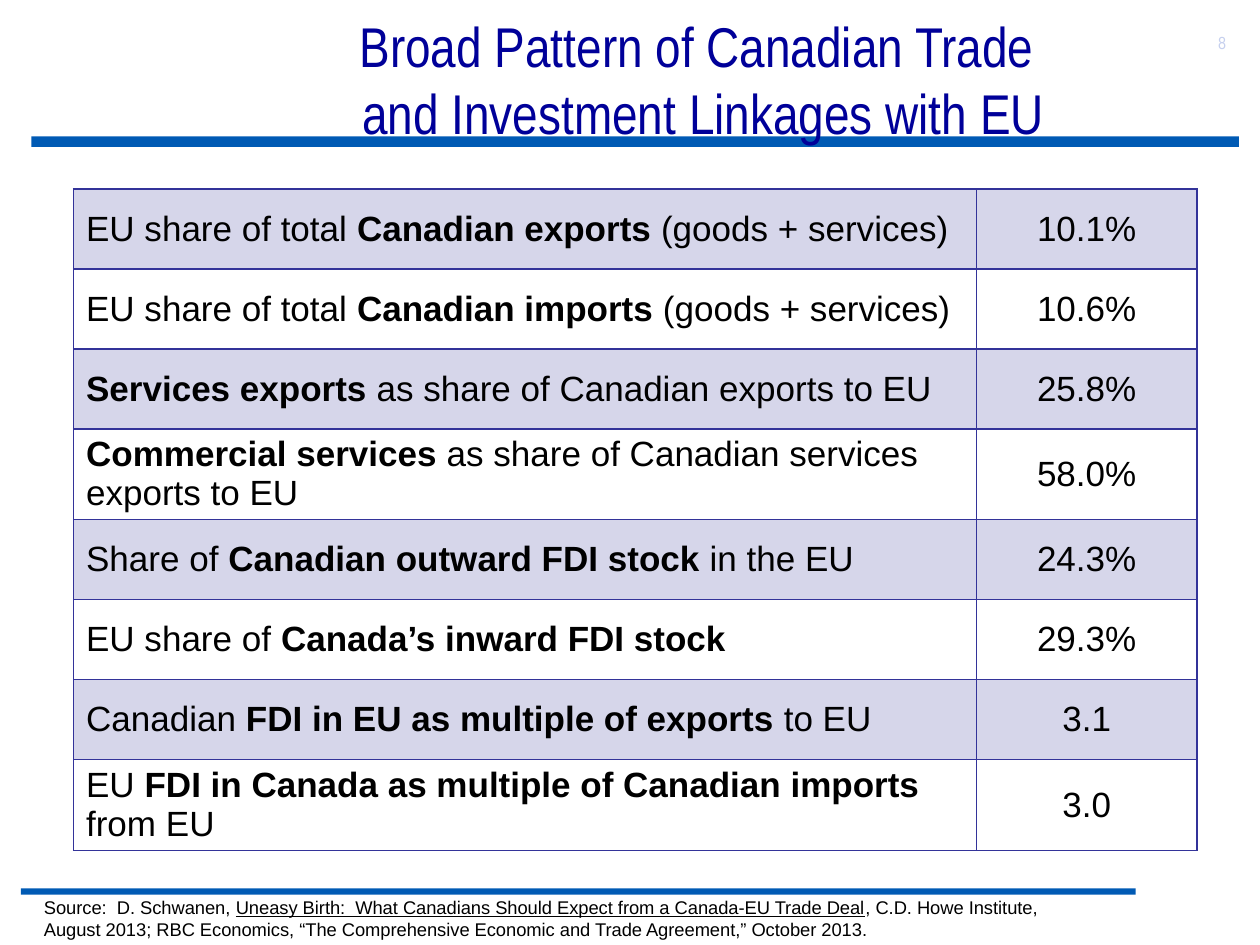
from lxml.etree import SubElement as Sub
from pptx import Presentation
from pptx.dml.color import RGBColor as RGB
from pptx.enum.shapes import MSO_SHAPE as Shape
from pptx.enum.text import MSO_ANCHOR as Anchor, MSO_AUTO_SIZE as Fit, PP_ALIGN as Align
from pptx.oxml.ns import qn
from pptx.util import Pt

INK = "333399"
BLUE = "005AB4"
HEAD = {"size": Pt(32), "name": "Arial Narrow", "color": "000099"}
BODY = {"size": Pt(20), "name": "Arial", "color": "000000"}
NOTE = {**BODY, "size": Pt(10.5)}
PAGE = {"size": Pt(10), "name": "Arial Narrow", "color": "C6D0EE"}
BOLD = {"bold": True}
LINE = {"underline": True}

ROWS = [
    (["EU share of total ", "Canadian exports", " (goods + services)"], "10.1%"),
    (["EU share of total ", "Canadian imports", " (goods + services)"], "10.6%"),
    (["", "Services exports", " as share of Canadian exports to EU"], "25.8%"),
    (["", "Commercial services", " as share of Canadian services exports to EU"], "58.0%"),
    (["Share of ", "Canadian outward FDI stock", " in the EU"], "24.3%"),
    (["EU share of ", "Canada’s inward FDI stock"], "29.3%"),
    (["Canadian ", "FDI in EU as multiple of exports ", "to EU"], "3.1"),
    (["EU ", "FDI in Canada as multiple of Canadian imports", " from EU"], "3.0"),
]
SOURCE = [
    "Source:  D. Schwanen, ",
    "Uneasy Birth:  What Canadians Should Expect from a Canada-EU Trade Deal",
    ", C.D. Howe Institute, August 2013; RBC Economics, “The Comprehensive "
    "Economic and Trade Agreement,” October 2013.",
]


def paint(fill, color):
    fill.solid()
    fill.fore_color.rgb = RGB.from_string(color)


def style(font, form):
    for key, val in form.items():
        if key == "color":
            font.color.rgb = RGB.from_string(val)
        else:
            setattr(font, key, val)


def write(para, parts, form, mark):
    for num, part in enumerate(parts):
        if part:
            run = para.add_run()
            run.text = part
            style(run.font, {**form, **mark} if num == 1 else form)


def add_bar(slide, *area):
    bar = slide.shapes.add_shape(Shape.RECTANGLE, *map(Pt, area))
    bar.shadow.inherit = False
    paint(bar.fill, BLUE)
    bar.line.fill.background()


def add_text(slide, area, parts, form, mark):
    frame = slide.shapes.add_textbox(*map(Pt, area)).text_frame
    frame.word_wrap = True
    write(frame.paragraphs[0], parts, form, mark)


def set_title(slide, text):
    title = slide.shapes.title
    title.left, title.top, title.width, title.height = map(Pt, (48, 12, 708, 66))
    frame = title.text_frame
    frame.text = text
    frame.auto_size = Fit.NONE
    frame.vertical_anchor = Anchor.MIDDLE
    para = frame.paragraphs[0]
    para.alignment = Align.CENTER
    for run in para.runs:
        style(run.font, HEAD)
    slide.shapes._spTree.append(title._element)


def add_edges(cell):
    props = cell._tc.get_or_add_tcPr()
    for side in ("lnL", "lnR", "lnT", "lnB"):
        edge = Sub(props, qn("a:" + side), w=str(Pt(1)))
        fill = Sub(edge, qn("a:solidFill"))
        Sub(fill, qn("a:srgbClr"), val=INK)


def shade(cell, tint):
    if not tint:
        cell.fill.background()
        return
    paint(cell.fill, INK)
    color = cell._tc.tcPr.find(".//" + qn("a:solidFill") + "[last()]/" + qn("a:srgbClr"))
    for node in cell._tc.tcPr.findall(qn("a:solidFill")):
        color = node[0]
    Sub(color, qn("a:alpha"), val="20000")


def fill_cell(cell, parts, align, tint):
    cell.vertical_anchor = Anchor.MIDDLE
    para = cell.text_frame.paragraphs[0]
    para.alignment = align
    write(para, parts, BODY, BOLD)
    add_edges(cell)
    shade(cell, tint)


def add_grid(slide):
    area = map(Pt, (42, 108, 642, 365.6))
    grid = slide.shapes.add_table(len(ROWS), 2, *area).table
    for col, wide in zip(grid.columns, (516, 126)):
        col.width = Pt(wide)
    for num, (parts, value) in enumerate(ROWS):
        grid.rows[num].height = Pt(45.7)
        tint = num % 2 == 0
        fill_cell(grid.cell(num, 0), parts, Align.LEFT, tint)
        fill_cell(grid.cell(num, 1), [value], Align.CENTER, tint)


def main():
    deck = Presentation()
    deck.slide_width, deck.slide_height = Pt(720), Pt(540)
    slide = deck.slides.add_slide(deck.slide_layouts[5])
    add_bar(slide, 18, 78, 690, 6)
    add_bar(slide, 12, 507.6, 637, 3.6)
    set_title(slide, "Broad Pattern of Canadian Trade \vand Investment Linkages with EU")
    add_grid(slide)
    add_text(slide, (18, 508.5, 588, 33.5), SOURCE, NOTE, LINE)
    add_text(slide, (689, 15, 31, 36), ["8"], PAGE, {})
    deck.save("out.pptx")


if __name__ == "__main__":
    main()
